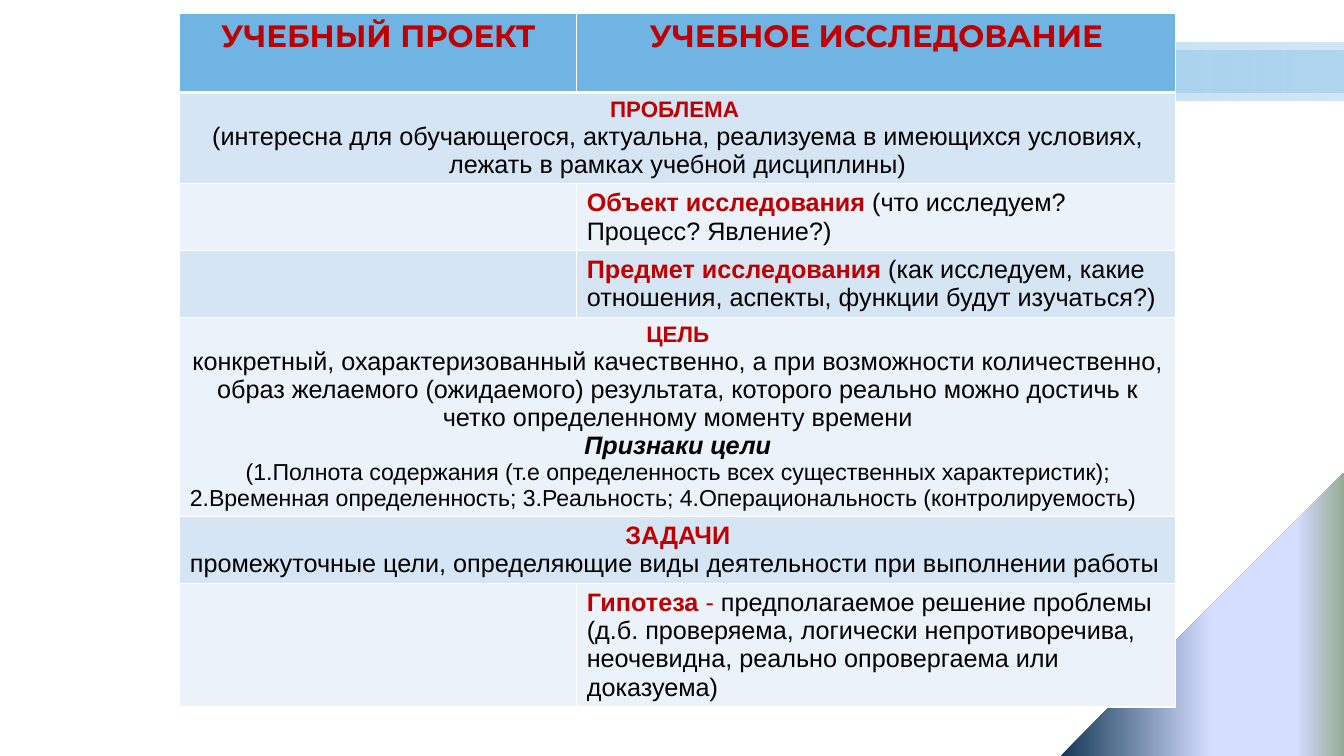
from lxml.etree import SubElement
from pptx import Presentation
from pptx.dml.color import RGBColor
from pptx.enum.shapes import MSO_SHAPE
from pptx.enum.text import PP_ALIGN
from pptx.oxml.ns import qn
from pptx.util import Cm, Pt

SKY = RGBColor(0x6F, 0xB4, 0xE3)
PALE = RGBColor(0xD5, 0xE5, 0xF4)
MIST = RGBColor(0xEB, 0xF2, 0xFA)
RED = RGBColor(0xC0, 0x00, 0x00)
BLACK = RGBColor(0x00, 0x00, 0x00)
WHITE = RGBColor(0xFF, 0xFF, 0xFF)
NAVY = RGBColor(0x14, 0x37, 0x56)
LILAC = RGBColor(0xD4, 0xDE, 0xFF)
SAGE = RGBColor(0x96, 0xAB, 0x94)

HEAD = ("Montserrat", 22, RED, True, False)
LABEL = ("Arial", 16, RED, True, False)
TERM = ("Arial", 18, RED, True, False)
DASH = ("Arial", 18, RED, False, False)
BODY = ("Arial", 18, BLACK, False, False)
SIGNS = ("Arial", 18, BLACK, True, True)
SMALL = ("Arial", 16.5, BLACK, False, False)
C, L = PP_ALIGN.CENTER, PP_ALIGN.LEFT

# Each row: height in cm, fill, then one cell (spanning) or two; a cell lists paragraphs.
ROWS = [
    (2.0, SKY, [
        [(C, [("УЧЕБНЫЙ ПРОЕКТ", HEAD)])],
        [(C, [("УЧЕБНОЕ ИССЛЕДОВАНИЕ", HEAD)])]]),
    (2.28, PALE, [[
        (C, [("ПРОБЛЕМА ", LABEL)]),
        (C, [("(интересна для обучающегося, актуальна, реализуема в имеющихся условиях, "
              "лежать в рамках учебной дисциплины)", BODY)])]]),
    (1.68, MIST, [[], [
        (L, [("Объект исследования ", TERM),
             ("(что исследуем? Процесс? Явление?)", BODY)])]]),
    (1.68, PALE, [[], [
        (L, [("Предмет исследования ", TERM),
             ("(как исследуем, какие отношения, аспекты, функции будут изучаться?)", BODY)])]]),
    (5.03, MIST, [[
        (C, [("ЦЕЛЬ", LABEL)]),
        (C, [("конкретный, охарактеризованный качественно, а при возможности количественно, "
              "образ желаемого (ожидаемого) результата, которого реально можно достичь к "
              "четко определенному моменту времени", BODY)]),
        (C, [("Признаки цели", SIGNS)]),
        (C, [("(1.Полнота содержания (т.е определенность всех существенных характеристик);",
              SMALL)]),
        (L, [("2.Временная определенность; 3.Реальность; 4.Операциональность "
              "(контролируемость)", SMALL)])]]),
    (1.68, PALE, [[
        (C, [("ЗАДАЧИ", TERM)]),
        (L, [("промежуточные цели, определяющие виды деятельности при выполнении работы",
              BODY)])]]),
    (3.11, MIST, [[], [
        (L, [("Гипотеза", TERM), (" - ", DASH),
             ("предполагаемое решение проблемы (д.б. проверяема, логически непротиворечива, "
              "неочевидна, реально опровергаема или доказуема)", BODY)])]]),
]
COLUMNS = [10.0, 15.09]
BAND_STOPS = [(0, WHITE, 100), (100, SKY, 32)]
CORNER_STOPS = [(0, NAVY, 100), (53, LILAC, 100), (83, LILAC, 100), (100, SAGE, 100)]
DECOR = [
    (MSO_SHAPE.RECTANGLE, (7.9, 1.07, 25.96, 1.47), 0, BAND_STOPS, 0),
    (MSO_SHAPE.RECTANGLE, (7.34, 1.27, 26.52, 1.07), 0, BAND_STOPS, 0),
    (MSO_SHAPE.RIGHT_TRIANGLE, (26.72, 11.91, 7.14, 7.14), 270, CORNER_STOPS, 90),
]


def add_color(parent, color, alpha=100):
    clr = SubElement(parent, qn("a:srgbClr"), val=str(color))
    if alpha < 100:
        SubElement(clr, qn("a:alpha"), val=str(alpha * 1000))


def add_decor(s, kind, box, rotation, stops, angle):
    sp = s.shapes.add_shape(kind, *map(Cm, box))
    sp.rotation = rotation
    sp.shadow.inherit = False
    sp.line.fill.background()
    sp.fill.gradient()
    grad = sp.fill._xPr.find(qn("a:gradFill"))
    for child in list(grad):
        grad.remove(child)
    grad.set("rotWithShape", "1")
    stop_list = SubElement(grad, qn("a:gsLst"))
    for pos, color, alpha in stops:
        add_color(SubElement(stop_list, qn("a:gs"), pos=str(pos * 1000)), color, alpha)
    SubElement(grad, qn("a:lin"), ang=str(angle * 60000), scaled="0")


def style_cell(cell, fill, bottom, top):
    tcPr = cell._tc.get_or_add_tcPr()
    for side, width in (("L", 1), ("R", 1), ("T", top), ("B", bottom)):
        ln = SubElement(tcPr, qn(f"a:ln{side}"), w=str(Pt(width)))
        add_color(SubElement(ln, qn("a:solidFill")), WHITE)
    cell.fill.solid()
    cell.fill.fore_color.rgb = fill


def write(tf, paragraphs):
    for i, (align, runs) in enumerate(paragraphs):
        p = tf.add_paragraph() if i else tf.paragraphs[0]
        p.alignment = align
        for text, (name, size, color, bold, italic) in runs:
            r = p.add_run()
            r.text = text
            r.font.name, r.font.size = name, Pt(size)
            r.font.bold, r.font.italic = bold, italic
            r.font.color.rgb = color


def main():
    prs = Presentation()
    prs.slide_width, prs.slide_height = Cm(33.86), Cm(19.05)
    s = prs.slides.add_slide(prs.slide_layouts[6])
    for item in DECOR:
        add_decor(s, *item)

    height = sum(row[0] for row in ROWS)
    table = s.shapes.add_table(len(ROWS), len(COLUMNS), Cm(4.53), Cm(0.33),
                               Cm(sum(COLUMNS)), Cm(height)).table
    for column, width in zip(table.columns, COLUMNS):
        column.width = Cm(width)
    for i, (row_height, fill, cells) in enumerate(ROWS):
        table.rows[i].height = Cm(row_height)
        for j in range(len(COLUMNS)):
            style_cell(table.cell(i, j), fill, 3 if i == 0 else 1, 3 if i == 1 else 1)
        if len(cells) == 1:
            table.cell(i, 0).merge(table.cell(i, 1))
        for j, paragraphs in enumerate(cells):
            write(table.cell(i, j).text_frame, paragraphs)
    prs.save("out.pptx")


if __name__ == "__main__":
    main()
